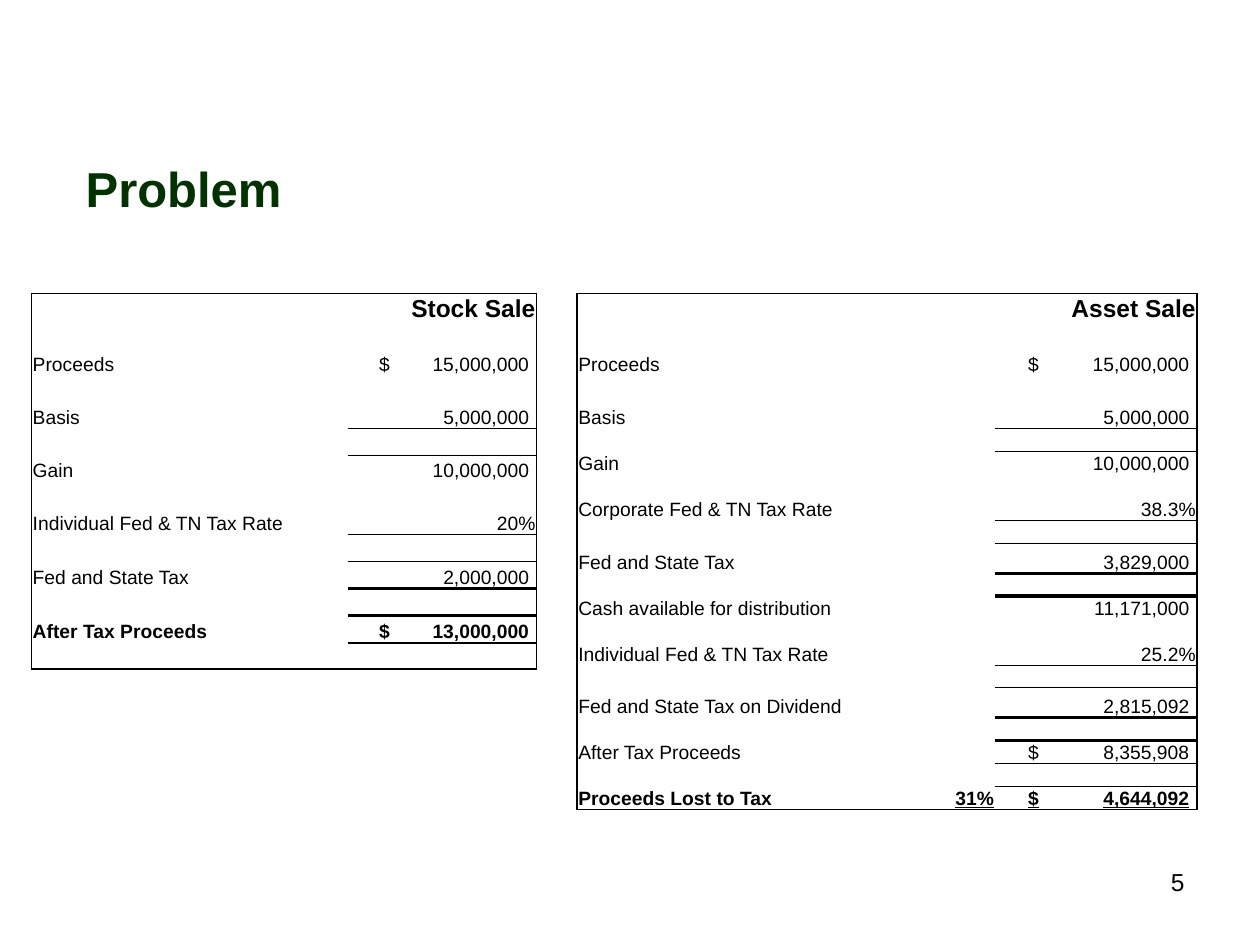
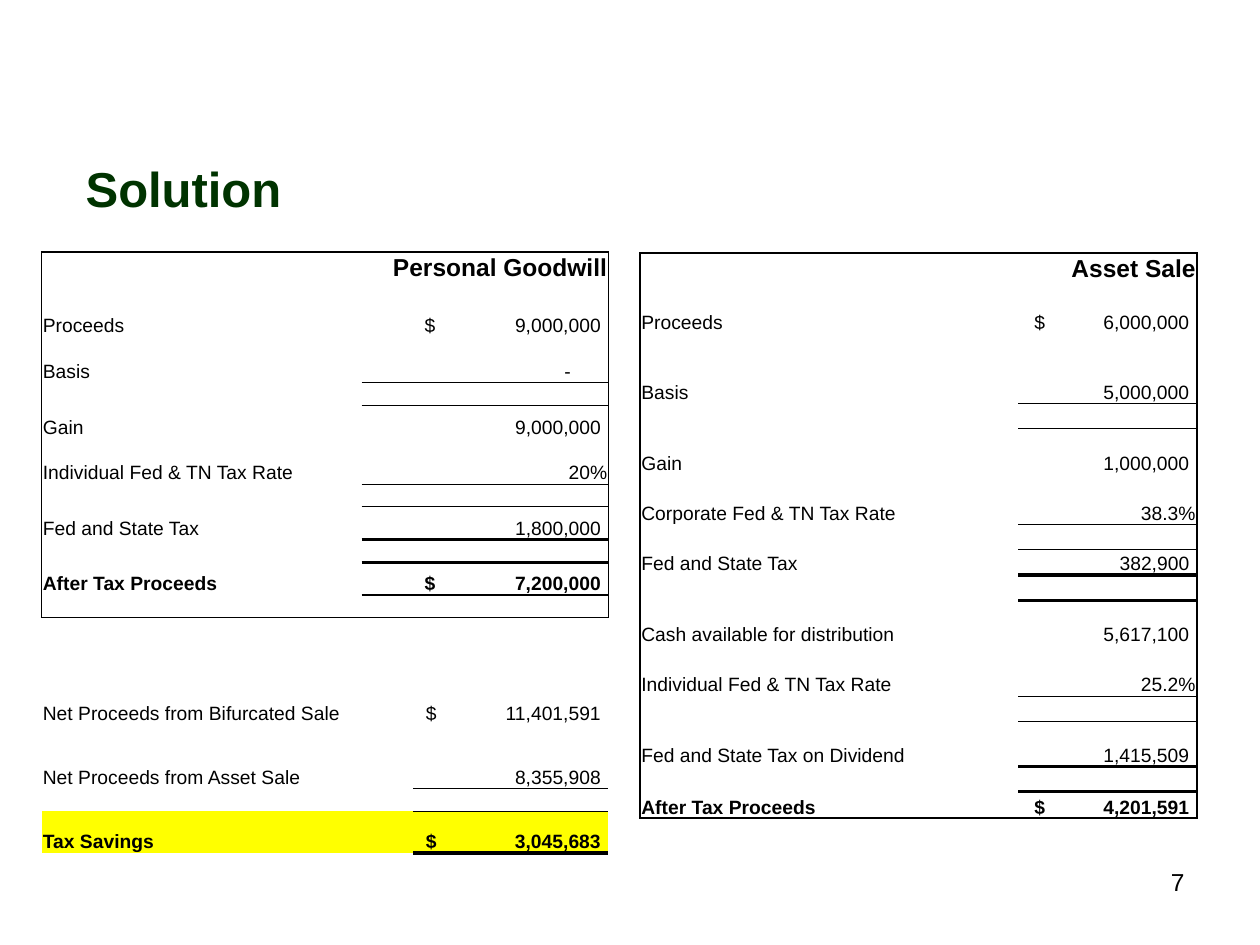
"""Build the Problem and Solution slides comparing after-tax sale proceeds."""
from dataclasses import dataclass

from lxml import etree
from pptx import Presentation
from pptx.dml.color import RGBColor
from pptx.enum import text
from pptx.oxml import ns
from pptx.util import Inches, Pt

COLORS = {"title": "003300", "ink": "000000", "highlight": "FFFF00"}
FONT = "Arial"
NO_STYLE = "{2D5ABB26-0587-4C30-8999-92F81FD0307C}"
HEADER_HEIGHT = 0.23
AMOUNT_GAP = 0.06
RIGHT = text.PP_ALIGN.RIGHT


@dataclass
class Line:
    """One line of a statement, drawn below a blank row."""
    label: str
    amount: str
    height: float
    rule: float = 0
    span: int = 1
    bold: bool = False
    share: str = ""


def sub(parent, tag, **attrs):
    """Append a DrawingML element."""
    return etree.SubElement(parent, ns.qn("a:" + tag), attrs)


def style(p, size, color="ink", bold=False, underline=False):
    """Format every run of a paragraph."""
    for r in p.runs:
        f = r.font
        f.name, f.size, f.bold = FONT, Pt(size), bold
        f.color.rgb = RGBColor.from_string(COLORS[color])
        if underline:
            f.underline = True


def add_title(s, title):
    """Fill and place the title placeholder."""
    sp = s.shapes.title
    sp.left, sp.top, sp.width, sp.height = map(Inches, (0.58, 1.08, 9, 0.83))
    tf = sp.text_frame
    tf.text = title
    tf.vertical_anchor = text.MSO_ANCHOR.MIDDLE
    tf.paragraphs[0].alignment = text.PP_ALIGN.LEFT
    style(tf.paragraphs[0], 28, "title", bold=True)


def add_page_number(s, number):
    """Write the page number at the lower right."""
    sp = s.shapes.add_textbox(*map(Inches, (7.17, 6.83, 2.33, 0.52)))
    tf = sp.text_frame
    tf.word_wrap = True
    tf.text = str(number)
    tf.paragraphs[0].alignment = RIGHT
    style(tf.paragraphs[0], 14)


def write(cell, value, size=11, align=None, bold=False, underline=False):
    """Put one formatted paragraph in a cell."""
    p = cell.text_frame.paragraphs[0]
    p.text = value
    p.alignment = align
    style(p, size, bold=bold, underline=underline)


def write_amount(cell, line, width, dollar):
    """Write an amount, with its currency sign at a fixed offset."""
    sign, _, number = line.amount.rpartition(" ")
    underline = bool(line.share)
    if sign:
        cell.margin_left = Inches(dollar)
        cell.margin_right = Inches(AMOUNT_GAP - 0.02)
        pPr = cell.text_frame.paragraphs[0]._p.get_or_add_pPr()
        stop = Inches(width - dollar - AMOUNT_GAP)
        sub(sub(pPr, "tabLst"), "tab", pos=str(stop), algn="r")
        write(cell, f"{sign}\t{number}", bold=line.bold, underline=underline)
        return
    if number == "-":
        cell.margin_right = Inches(0.3)
    elif not number.endswith("%"):
        cell.margin_right = Inches(AMOUNT_GAP)
    write(cell, number, align=RIGHT, bold=line.bold, underline=underline)


def prepare_cell(cell):
    """Clear a cell's fill and margins and keep it low when empty."""
    cell.fill.background()
    cell.vertical_anchor = text.MSO_ANCHOR.BOTTOM
    cell.margin_left = cell.margin_right = Inches(0.01)
    cell.margin_top = cell.margin_bottom = 0
    sub(cell.text_frame.paragraphs[0]._p, "endParaRPr", sz="900")


def draw_borders(cell, widths):
    """Draw the borders given as side letter to width in points."""
    tcPr = cell._tc.get_or_add_tcPr()
    for i, side in enumerate(k for k in "LRTB" if widths.get(k)):
        ln = etree.Element(ns.qn("a:ln" + side), w=str(Pt(widths[side])))
        sub(sub(ln, "solidFill"), "srgbClr", val=COLORS["ink"])
        tcPr.insert(i, ln)


def add_statement(s, at, cols, lines, blank, dollar, header="", end_blank=False):
    """Add a statement table, framed when it has a header."""
    heights = [HEADER_HEIGHT] if header else []
    line_rows = {}
    for line in lines:
        if heights:
            heights.append(blank)
        line_rows[len(heights)] = line
        heights.append(line.height)
    if end_blank:
        heights.append(blank)
    frame = s.shapes.add_table(len(heights), len(cols), *map(Inches, (*at, sum(cols), sum(heights))))
    tbl = frame.table
    tbl.first_row = tbl.horz_banding = False
    tbl._tbl.tblPr.find(ns.qn("a:tableStyleId")).text = NO_STYLE
    for col, width in zip(tbl.columns, cols):
        col.width = Inches(width)
    for row, height in zip(tbl.rows, heights):
        row.height = Inches(height)
    for cell in tbl.iter_cells():
        prepare_cell(cell)

    last_row, last_col = len(heights) - 1, len(cols) - 1
    if header:
        write(tbl.cell(0, last_col), header, 14, RIGHT, bold=True)
    for i, line in line_rows.items():
        label = tbl.cell(i, 0)
        write(label, line.label, bold=line.bold)
        if line.span > 1:
            label.merge(tbl.cell(i, line.span - 1))
        if line.share:
            write(tbl.cell(i, 1), line.share, align=RIGHT, bold=True, underline=True)
        write_amount(tbl.cell(i, last_col), line, cols[-1], dollar)

    rules = {i: line.rule for i, line in line_rows.items()}
    edge = 1 if header else 0
    for i in range(len(heights)):
        for j in range(len(cols)):
            widths = {"L": edge * (j == 0), "R": edge * (j == last_col),
                      "T": edge * (i == 0), "B": edge * (i == last_row)}
            if j == last_col:
                widths["T"] = widths["T"] or rules.get(i - 1, 0)
                widths["B"] = widths["B"] or rules.get(i, 0)
            draw_borders(tbl.cell(i, j), widths)
    return tbl


def highlight_row(tbl, row):
    """Fill a row with the highlight colour."""
    for cell in tbl.rows[row].cells:
        cell.fill.solid()
        cell.fill.fore_color.rgb = RGBColor.from_string(COLORS["highlight"])


def add_slide(prs, title, number):
    """Add a slide with its title and page number."""
    s = prs.slides.add_slide(prs.slide_layouts[5])
    add_title(s, title)
    add_page_number(s, number)
    return s


def problem_slide(prs):
    """Compare a stock sale with an asset sale."""
    s = add_slide(prs, "Problem", 5)
    add_statement(s, (4.58, 2.33), (2.76, 0.56, 1.6), [
        Line("Proceeds", "$ 15,000,000", 0.24),
        Line("Basis", "5,000,000", 0.24, 0.5),
        Line("Gain", "10,000,000", 0.18),
        Line("Corporate Fed & TN Tax Rate", "38.3%", 0.18, 0.5),
        Line("Fed and State Tax", "3,829,000", 0.24, 2),
        Line("Cash available for distribution", "11,171,000", 0.18),
        Line("Individual Fed & TN Tax Rate", "25.2%", 0.18, 0.5),
        Line("Fed and State Tax on Dividend", "2,815,092", 0.24, 2),
        Line("After Tax Proceeds", "$ 8,355,908", 0.18, 1),
        Line("Proceeds Lost to Tax", "$ 4,644,092", 0.18, bold=True, share="31%"),
    ], blank=0.18, dollar=0.26, header="Asset Sale")
    add_statement(s, (0.25, 2.33), (0.71, 0.9, 0.9, 1.5), [
        Line("Proceeds", "$ 15,000,000", 0.21),
        Line("Basis", "5,000,000", 0.21, 0.5),
        Line("Gain", "10,000,000", 0.21),
        Line("Individual Fed & TN Tax Rate", "20%", 0.21, 0.5, span=3),
        Line("Fed and State Tax", "2,000,000", 0.22, 2, span=2),
        Line("After Tax Proceeds", "$ 13,000,000", 0.22, 1, span=2, bold=True),
    ], blank=0.21, dollar=0.25, header="Stock Sale", end_blank=True)


def solution_slide(prs):
    """Show the sale split between personal goodwill and assets."""
    s = add_slide(prs, "Solution", 7)
    add_statement(s, (0.33, 2), (1.71, 0.48, 0.35, 1.96), [
        Line("Proceeds", "$ 9,000,000", 0.26),
        Line("Basis", "-", 0.18, 0.5),
        Line("Gain", "9,000,000", 0.26),
        Line("Individual Fed & TN Tax Rate", "20%", 0.18, 0.5, span=3),
        Line("Fed and State Tax", "1,800,000", 0.26, 2),
        Line("After Tax Proceeds", "$ 7,200,000", 0.26, 1, bold=True),
    ], blank=0.18, dollar=0.5, header="Personal Goodwill", end_blank=True)
    add_statement(s, (5.08, 2.01), (2.52, 0.48, 1.42), [
        Line("Proceeds", "$ 6,000,000", 0.2),
        Line("Basis", "5,000,000", 0.36, 0.5),
        Line("Gain", "1,000,000", 0.36),
        Line("Corporate Fed & TN Tax Rate", "38.3%", 0.2, 0.5),
        Line("Fed and State Tax", "382,900", 0.2, 2),
        Line("Cash available for distribution", "5,617,100", 0.36),
        Line("Individual Fed & TN Tax Rate", "25.2%", 0.2, 0.5),
        Line("Fed and State Tax on Dividend", "1,415,509", 0.36, 2),
        Line("After Tax Proceeds", "$ 4,201,591", 0.21, bold=True),
    ], blank=0.2, dollar=0.13, header="Asset Sale")
    savings = add_statement(s, (0.33, 5.42), (1.76, 0.47, 0.72, 1.55), [
        Line("Net Proceeds from Bifurcated Sale", "$ 11,401,591", 0.33, span=3),
        Line("Net Proceeds from Asset Sale", "8,355,908", 0.33, 0.5, span=3),
        Line("Tax Savings", "$ 3,045,683", 0.33, 2, bold=True),
    ], blank=0.18, dollar=0.1)
    highlight_row(savings, 4)


def main():
    """Build and save the deck."""
    prs = Presentation()
    prs.slide_width, prs.slide_height = Inches(10), Inches(7.5)
    problem_slide(prs)
    solution_slide(prs)
    prs.save("out.pptx")


if __name__ == "__main__":
    main()
